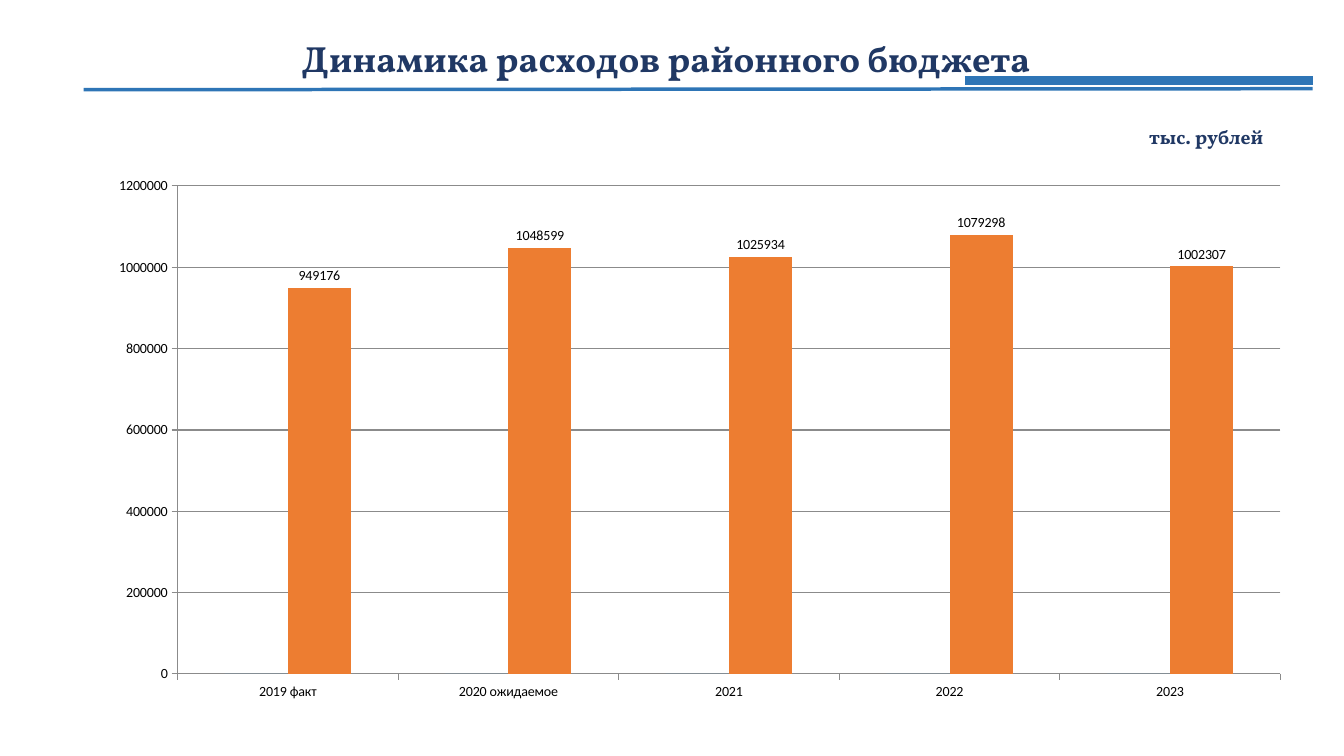
from lxml import etree
from pptx import Presentation
from pptx import util as u
from pptx.chart import data
from pptx.dml import color
from pptx.enum import chart as charts, shapes, text
from pptx.oxml import ns

NAVY, BLUE, GRAY = "203864", "2E75B6", "8B8B8B"


def rgb(value):
    return color.RGBColor.from_string(value)


def add_heading(page, words, place, size, align, spacing):
    box = page.shapes.add_textbox(*map(u.Inches, place))
    box.text_frame.word_wrap = True
    box.text_frame.vertical_anchor = text.MSO_ANCHOR.MIDDLE
    para = box.text_frame.paragraphs[0]
    para.alignment, para.line_spacing = align, spacing
    span = para.add_run()
    span.text = words
    for name, value in {"name": "Vollkorn", "size": u.Pt(size), "bold": True}.items():
        setattr(span.font, name, value)
    span.font.color.rgb = rgb(NAVY)


deck = Presentation()
deck.slide_width, deck.slide_height = u.Inches(13.33), u.Inches(7.5)
page = deck.slides.add_slide(deck.slide_layouts[6])

add_heading(page, "Динамика расходов районного бюджета",
            (2.11, 0.27, 9, 0.66), 26, text.PP_ALIGN.CENTER, 0.9)
add_heading(page, "тыс. рублей",
            (10.9, 1.19, 1.73, 0.34), 14, text.PP_ALIGN.RIGHT, 1.0)

for left, top, bottom, width in [(0.83, 0.89, 0.88, 2.5), (9.57, 0.8, 0.8, 6)]:
    rule = page.shapes.add_connector(
        shapes.MSO_CONNECTOR.STRAIGHT,
        u.Inches(left), u.Inches(top), u.Inches(13.02), u.Inches(bottom))
    rule.line.color.rgb = rgb(BLUE)
    rule.line.width = u.Pt(width)
    etree.SubElement(rule.element.spPr, ns.qn("a:effectLst"))

expenses = data.CategoryChartData(number_format="General")
expenses.categories = ["2019 факт", "2020 ожидаемое", "2021", "2022", "2023"]
expenses.add_series("Series 1", [0] * 5)
expenses.add_series("Series 2", [949176, 1048599, 1025934, 1079298, 1002307])
chart = page.shapes.add_chart(
    charts.XL_CHART_TYPE.COLUMN_CLUSTERED,
    u.Inches(0.92), u.Inches(1.63), u.Inches(12.02), u.Inches(5.38), expenses).chart
chart.has_legend = chart.has_title = False
for name, value in {"name": "Calibri", "size": u.Pt(10)}.items():
    setattr(chart.font, name, value)
chart.font.color.rgb = rgb("000000")

plot = chart.plots[0]
plot.gap_width, plot.overlap, plot.vary_by_categories = 150, 0, False
for series, fill in zip(plot.series, ["5B9BD5", "ED7D31"]):
    series.format.fill.solid()
    series.format.fill.fore_color.rgb = rgb(fill)
labels = plot.series[1].data_labels
labels.show_value = True
labels.position = charts.XL_LABEL_POSITION.OUTSIDE_END

amounts = chart.value_axis
amounts.minimum_scale, amounts.maximum_scale, amounts.major_unit = 0, 1200000, 200000
amounts.has_major_gridlines = True
for axis in (chart.category_axis, amounts):
    axis.major_tick_mark = charts.XL_TICK_MARK.OUTSIDE
    axis.minor_tick_mark = charts.XL_TICK_MARK.NONE
for ruled in (chart.category_axis, amounts, amounts.major_gridlines):
    ruled.format.line.color.rgb = rgb(GRAY)
    ruled.format.line.width = u.Pt(0.75)

area = chart.element.chart.plotArea
for layout in area.findall(ns.qn("c:layout")):
    area.remove(layout)
layout = etree.Element(ns.qn("c:layout"))
manual = etree.SubElement(layout, ns.qn("c:manualLayout"))
for tag, value in {"layoutTarget": "inner", "xMode": "edge", "yMode": "edge",
                   "x": 0.07, "y": 0.04, "w": 0.91, "h": 0.9}.items():
    etree.SubElement(manual, ns.qn("c:" + tag)).set("val", str(value))
area.insert(0, layout)

deck.save("out.pptx")
